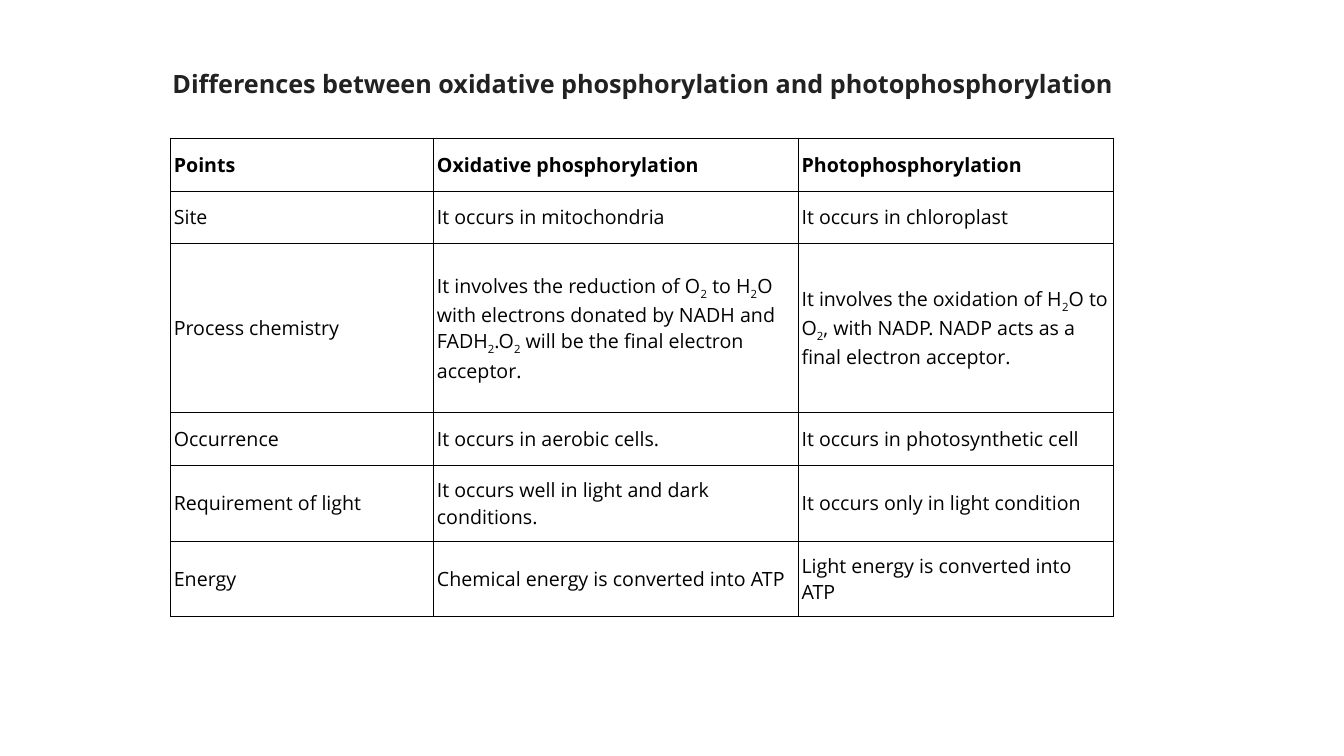
from lxml import etree
from pptx import Presentation
from pptx.dml.color import RGBColor
from pptx.enum.text import MSO_ANCHOR, MSO_AUTO_SIZE, PP_ALIGN
from pptx.oxml.ns import qn
from pptx.util import Cm, Pt

THEME = {
    "font": "Open Sans",
    "ink": RGBColor(0x00, 0x00, 0x00),
    "heading": RGBColor(0x22, 0x22, 0x22),
    "paper": RGBColor(0xFF, 0xFF, 0xFF),
    "title_size": Pt(18),
    "cell_size": Pt(14),
    "border": Pt(0.6),
}

COLUMN_WIDTHS = [6.63, 9.19, 7.93]
ROW_HEIGHTS = [1.33, 1.33, 4.25, 1.33, 1.91, 1.91]
COMPARISON = [
    ("Points", "Oxidative phosphorylation", "Photophosphorylation"),
    ("Site", "It occurs in mitochondria", "It occurs in chloroplast"),
    (
        "Process chemistry",
        "It involves the reduction of O₂ to H₂O with electrons donated by "
        "NADH and FADH₂.O₂ will be the final electron acceptor.",
        "It involves the oxidation of H₂O to O₂, with NADP. "
        "NADP acts as a final electron acceptor.",
    ),
    ("Occurrence", "It occurs in aerobic cells.", "It occurs in photosynthetic cell"),
    (
        "Requirement of light",
        "It occurs well in light and dark conditions.",
        "It occurs only in light condition",
    ),
    (
        "Energy",
        "Chemical energy is converted into ATP",
        "Light energy is converted into ATP",
    ),
]


def add_span(para, text, size, color, bold):
    span = para.add_run()
    span.text = text
    span.font.color.rgb = color
    for name, value in {"name": THEME["font"], "size": size, "bold": bold}.items():
        setattr(span.font, name, value)
    return span


def add_borders(cell):
    properties = cell._tc.get_or_add_tcPr()
    for index, side in enumerate(("lnL", "lnR", "lnT", "lnB")):
        line = etree.Element(qn(f"a:{side}"), w=str(THEME["border"]))
        fill = etree.SubElement(line, qn("a:solidFill"))
        etree.SubElement(fill, qn("a:srgbClr"), val=str(THEME["ink"]))
        properties.insert(index, line)


deck = Presentation()
deck.slide_width, deck.slide_height = Cm(33.87), Cm(19.05)
page = deck.slides.add_slide(deck.slide_layouts.get_by_name("Title Only"))

title = page.shapes.title
title_place = {"left": 4.09, "top": 1.6, "width": 25.5, "height": 1.02}
for name, value in title_place.items():
    setattr(title, name, Cm(value))
title_format = {
    "word_wrap": True,
    "auto_size": MSO_AUTO_SIZE.SHAPE_TO_FIT_TEXT,
    "vertical_anchor": MSO_ANCHOR.TOP,
}
for name, value in title_format.items():
    setattr(title.text_frame, name, value)
heading = title.text_frame.paragraphs[0]
heading.alignment = PP_ALIGN.LEFT
add_span(
    heading,
    "Differences between oxidative phosphorylation and photophosphorylation",
    THEME["title_size"],
    THEME["heading"],
    True,
)

table = page.shapes.add_table(
    len(ROW_HEIGHTS),
    len(COLUMN_WIDTHS),
    Cm(4.3),
    Cm(3.48),
    Cm(sum(COLUMN_WIDTHS)),
    Cm(sum(ROW_HEIGHTS)),
).table
table.horz_banding = False
for column, width in zip(table.columns, COLUMN_WIDTHS):
    column.width = Cm(width)
for row, height in zip(table.rows, ROW_HEIGHTS):
    row.height = Cm(height)

cell_format = {"vertical_anchor": MSO_ANCHOR.MIDDLE}
for side in ("left", "right", "top", "bottom"):
    cell_format[f"margin_{side}"] = Cm(0.08)

for row_index, texts in enumerate(COMPARISON):
    for column_index, text in enumerate(texts):
        cell = table.cell(row_index, column_index)
        for name, value in cell_format.items():
            setattr(cell, name, value)
        cell.fill.solid()
        cell.fill.fore_color.rgb = THEME["paper"]
        add_borders(cell)
        style = (THEME["cell_size"], THEME["ink"], row_index == 0)
        para = cell.text_frame.paragraphs[0]
        for index, part in enumerate(text.split("₂")):
            if index:
                subscript = add_span(para, "2", *style)
                subscript._r.get_or_add_rPr().set("baseline", "-25000")
            add_span(para, part, *style)

deck.save("out.pptx")
